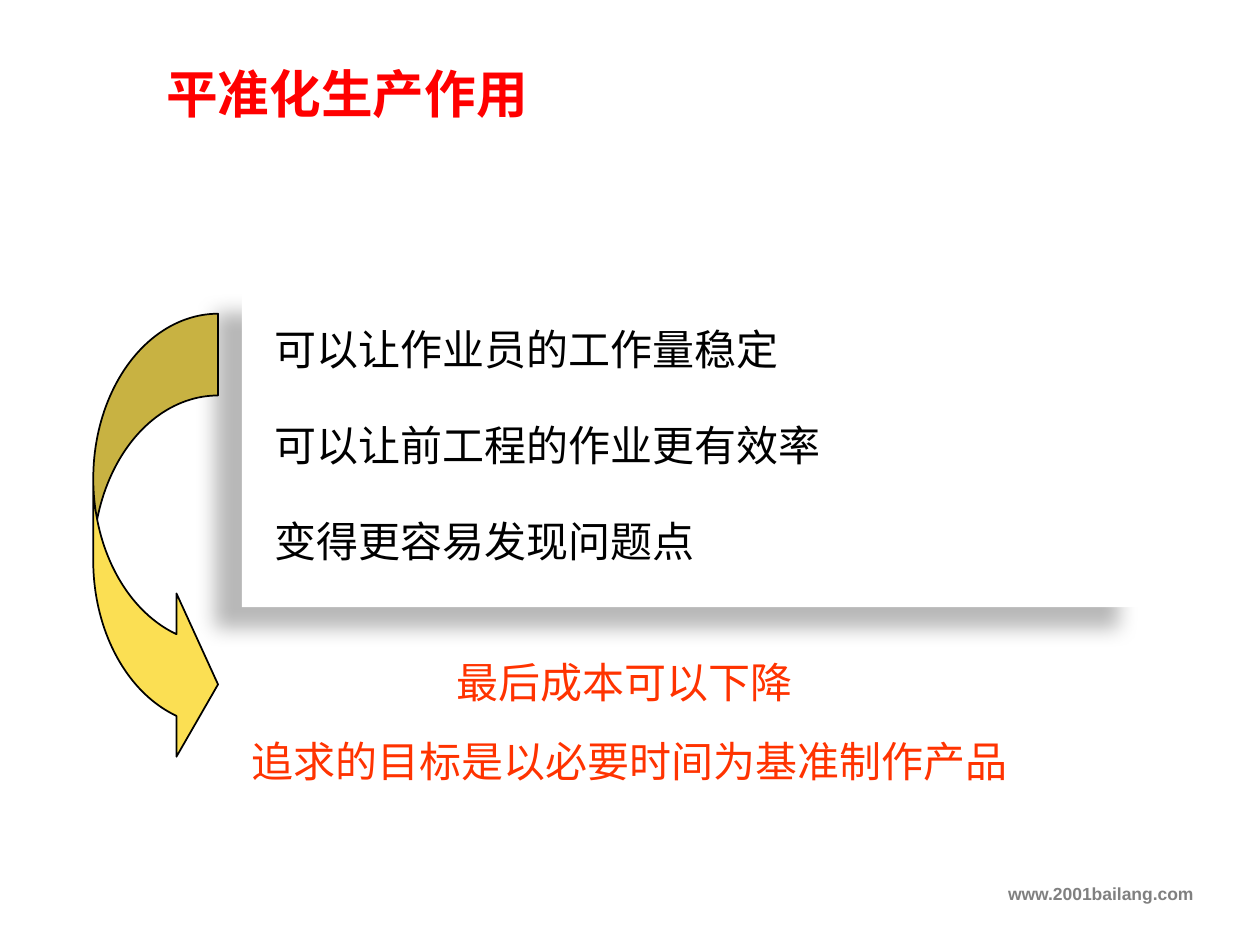
from dataclasses import dataclass

from lxml.etree import SubElement
from pptx import Presentation
from pptx.dml.color import RGBColor
from pptx.enum.shapes import MSO_SHAPE
from pptx.enum.text import MSO_ANCHOR, MSO_AUTO_SIZE, PP_ALIGN
from pptx.oxml.ns import qn
from pptx.util import Emu, Inches, Pt


@dataclass(frozen=True)
class Theme:
    """Colours, fonts and type sizes of the slide."""

    body_font: str = "Noto Sans CJK SC"
    footer_font: str = "Arial"
    title_size: float = 29.5
    body_size: float = 24
    footer_size: float = 10
    red: str = "FF0000"
    orange: str = "FF3300"
    black: str = "000000"
    white: str = "FFFFFF"
    grey: str = "808080"
    yellow: str = "FBDF53"


THEME = Theme()
WIDTH, HEIGHT = Inches(10), Inches(7.5)
BENEFITS = ["可以让作业员的工作量稳定", "可以让前工程的作业更有效率", "变得更容易发现问题点"]


def area(left, top, width, height):
    """Turn inches into a tuple of lengths."""
    return tuple(Inches(value) for value in (left, top, width, height))


def write(frame, lines, color, size=THEME.body_size, font=THEME.body_font,
          bold=False, align=PP_ALIGN.LEFT, leading=None, before=0):
    """Fill a text frame with one formatted run per paragraph."""
    frame.word_wrap = True
    frame.auto_size = MSO_AUTO_SIZE.NONE
    for index, line in enumerate(lines):
        para = frame.add_paragraph() if index else frame.paragraphs[0]
        para.alignment = align
        para.space_before = Pt(before if index else 0)
        if leading:
            para.line_spacing = Pt(leading)
        span = para.add_run()
        span.text = line
        span.font.name = font
        span.font.size = Pt(size)
        span.font.bold = bold
        span.font.color.rgb = RGBColor.from_string(color)
        SubElement(span.font._element, qn("a:ea"), typeface=font)


def add_text(page, place, lines, color, inset=None, **style):
    """Add a text box, with its own insets when given."""
    frame = page.shapes.add_textbox(*area(*place)).text_frame
    if inset:
        frame.margin_left = frame.margin_right = Inches(inset[0])
        frame.margin_top = frame.margin_bottom = Inches(inset[1])
    write(frame, lines, color, **style)


def add_title(page, place, text):
    """Place and format the title placeholder."""
    title = page.shapes.title
    title.left, title.top, title.width, title.height = area(*place)
    frame = title.text_frame
    frame.vertical_anchor = MSO_ANCHOR.MIDDLE
    frame.margin_left = frame.margin_right = Inches(0.09)
    write(frame, [text], THEME.red, size=THEME.title_size, bold=True)


def add_filled(page, kind, place, fill, line=None):
    """Add a filled preset shape with an optional outline."""
    shape = page.shapes.add_shape(kind, *area(*place))
    shape.shadow.inherit = False
    shape.fill.solid()
    shape.fill.fore_color.rgb = RGBColor.from_string(fill)
    if line:
        shape.line.color.rgb = RGBColor.from_string(line)
        shape.line.width = Pt(1)
    else:
        shape.line.fill.background()
    return shape


def cast_shadow(shape, color, opacity, blur, distance, angle):
    """Give a shape a soft outer shadow."""
    effects = shape._element.spPr.find(qn("a:effectLst"))
    shadow = SubElement(effects, qn("a:outerShdw"), blurRad=str(Emu(Pt(blur))),
                        dist=str(Emu(Pt(distance))), dir=str(angle * 60000),
                        algn="ctr", rotWithShape="0")
    tone = SubElement(shadow, qn("a:srgbClr"), val=color)
    SubElement(tone, qn("a:alpha"), val=str(opacity * 1000))


def main():
    """Build the slide and save it."""
    deck = Presentation()
    deck.slide_width, deck.slide_height = WIDTH, HEIGHT
    page = deck.slides.add_slide(deck.slide_layouts[5])
    add_title(page, (1.23, 0.46, 6.14, 0.55), "平准化生产作用")
    add_text(page, (0, 6.96, 9.57, 0.35), ["www.2001bailang.com"], THEME.grey,
             size=THEME.footer_size, font=THEME.footer_font, bold=True,
             align=PP_ALIGN.RIGHT)
    panel = add_filled(page, MSO_SHAPE.RECTANGLE, (1.92, 2.31, 7.17, 2.51), THEME.white)
    cast_shadow(panel, THEME.black, opacity=28, blur=11.8, distance=19.7, angle=141)
    add_text(page, (0, 5.81, 10, 0.54), ["追求的目标是以必要时间为基准制作产品"],
             THEME.orange, inset=(0.18, 0.05), align=PP_ALIGN.CENTER, leading=27)
    add_text(page, (2.08, 2.32, 6.83, 2.25), BENEFITS, THEME.black,
             leading=43, before=12)
    arrow = add_filled(page, MSO_SHAPE.CURVED_RIGHT_ARROW, (0.74, 2.49, 0.99, 3.59),
                       THEME.yellow, line=THEME.black)
    for index, value in enumerate((0.655, 1.309, 0.333)):
        arrow.adjustments[index] = value
    add_text(page, (1.42, 5.19, 7.08, 0.4), ["最后成本可以下降"], THEME.orange,
             inset=(0, 0), align=PP_ALIGN.CENTER, leading=30)
    deck.save("out.pptx")


if __name__ == "__main__":
    main()
